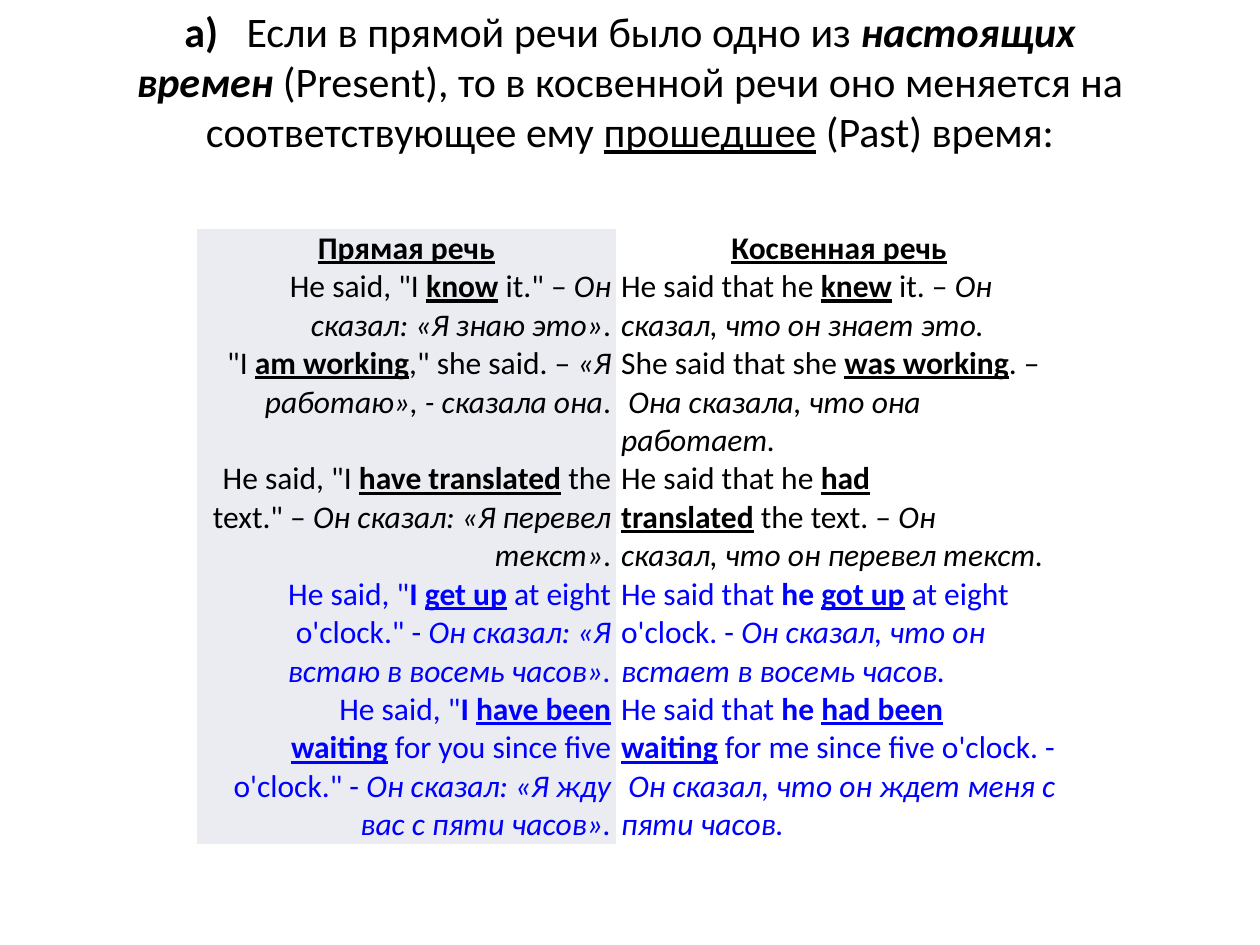
"""Build a slide on how present tenses shift in reported speech; "_" marks a no-break space."""
import pptx
import pptx.dml.color
import pptx.enum.text
import pptx.oxml.ns
import pptx.util

Inches = pptx.util.Inches
Pt = pptx.util.Pt
ALIGN = pptx.enum.text.PP_ALIGN

BLACK = pptx.dml.color.RGBColor(0x00, 0x00, 0x00)
BLUE = pptx.dml.color.RGBColor(0x00, 0x00, 0xFF)
WHITE = pptx.dml.color.RGBColor(0xFF, 0xFF, 0xFF)
PALE = pptx.dml.color.RGBColor(0xEA, 0xEC, 0xF2)

FONT = "Calibri"
NO_BREAK_SPACE = chr(160)
NO_GRID_STYLE = "{2D5ABB26-0587-4C30-8999-92F81FD0307C}"
LINE_HEIGHT = 0.305
COLUMN_WIDTHS = (3.33, 3.54)
COLUMN_FILLS = (PALE, WHITE)
COLUMN_ALIGNS = (ALIGN.RIGHT, ALIGN.LEFT)

RULE = [
    ("а)", "b"),
    ("___Если в прямой речи было одно из_", ""),
    ("настоящих времен", "bi"),
    ("_(Present), то в косвенной речи оно меняется на соответствующее ему_", ""),
    ("прошедшее", "u"),
    ("_(Past) время:", ""),
]

HEADINGS = ([("Прямая речь", "bu")], [("Косвенная речь", "bu")])

EXAMPLES = [
    (2, BLACK,
     [("He said, \"I_", ""), ("know", "bu"), ("_it.\" –_", ""),
      ("Он сказал: «Я знаю это»", "i"), (".", "")],
     [("He said that he_", ""), ("knew", "bu"), ("_it. –_", ""),
      ("Он сказал, что он знает это.", "i")]),
    (3, BLACK,
     [("\"I_", ""), ("am working", "bu"), (",\" she said. –_", ""),
      ("«Я работаю», - сказала она", "i"), (".", "")],
     [("She said that she_", ""), ("was working", "bu"), (". –_", ""),
      ("Она сказала, что она работает.", "i")]),
    (3, BLACK,
     [("He said, \"I_", ""), ("have translated", "bu"), ("_the text.\" –_", ""),
      ("Он сказал: «Я перевел текст»", "i"), (".", "")],
     [("He said that he_", ""), ("had translated", "bu"), ("_the text. –_", ""),
      ("Он сказал,_что он перевел текст.", "i")]),
    (3, BLUE,
     [("He said, \"", ""), ("I_", "b"), ("get up", "bu"),
      ("_at eight o'clock.\"_-", ""),
      ("_Он сказал: «Я встаю в восемь часов».", "i")],
     [("He said that_", ""), ("he_", "b"), ("got up", "bu"),
      ("_at eight o'clock._-_", ""),
      ("Он сказал, что он встает в восемь часов.", "i")]),
    (4, BLUE,
     [("He said, \"", ""), ("I_", "b"), ("have been waiting", "bu"),
      ("_for you since five o'clock.\" -_", ""),
      ("Он сказал: «Я жду вас с пяти часов».", "i")],
     [("He said that_", ""), ("he_", "b"), ("had been waiting", "bu"),
      ("_for me since five o'clock. -_", ""),
      ("Он сказал,_что он ждет меня с пяти часов.", "i")]),
]


def write_runs(paragraph, runs, size, color, align):
    paragraph.alignment = align
    for text, style in runs:
        run = paragraph.add_run()
        run.text = text.replace("_", NO_BREAK_SPACE)
        run.font.name = FONT
        run.font.size = Pt(size)
        run.font.color.rgb = color
        run.font.bold = "b" in style
        run.font.italic = "i" in style
        run.font.underline = "u" in style


def add_rule(slide):
    rule = slide.shapes.add_textbox(Inches(0.5), Inches(0.13), Inches(9), Inches(1.42))
    frame = rule.text_frame
    frame.word_wrap = True
    frame.vertical_anchor = pptx.enum.text.MSO_ANCHOR.MIDDLE
    frame.margin_bottom = Inches(0.45)
    write_runs(frame.paragraphs[0], RULE, 24, BLACK, ALIGN.CENTER)


def add_examples(slide):
    rows = [(1, BLACK, *HEADINGS), *EXAMPLES]
    height = LINE_HEIGHT * sum(row[0] for row in rows)
    holder = slide.shapes.add_table(
        len(rows), len(COLUMN_WIDTHS), Inches(1.56), Inches(1.82),
        Inches(sum(COLUMN_WIDTHS)), Inches(height))
    for style_id in holder.element.iter(pptx.oxml.ns.qn("a:tableStyleId")):
        style_id.text = NO_GRID_STYLE
    speech = holder.table
    speech.first_row = speech.horz_banding = False
    for column, width in zip(speech.columns, COLUMN_WIDTHS):
        column.width = Inches(width)
    for r, (lines, color, *sentences) in enumerate(rows):
        speech.rows[r].height = Inches(lines * LINE_HEIGHT)
        for c, runs in enumerate(sentences):
            cell = speech.cell(r, c)
            cell.margin_left = cell.margin_right = Inches(0.04)
            cell.margin_top = cell.margin_bottom = 0
            cell.fill.solid()
            cell.fill.fore_color.rgb = COLUMN_FILLS[c]
            align = COLUMN_ALIGNS[c] if r else ALIGN.CENTER
            write_runs(cell.text_frame.paragraphs[0], runs, 18, color, align)


def main():
    deck = pptx.Presentation()
    deck.slide_width, deck.slide_height = Inches(10), Inches(7.5)
    slide = deck.slides.add_slide(deck.slide_layouts[6])
    add_rule(slide)
    add_examples(slide)
    deck.save("out.pptx")


if __name__ == "__main__":
    main()
